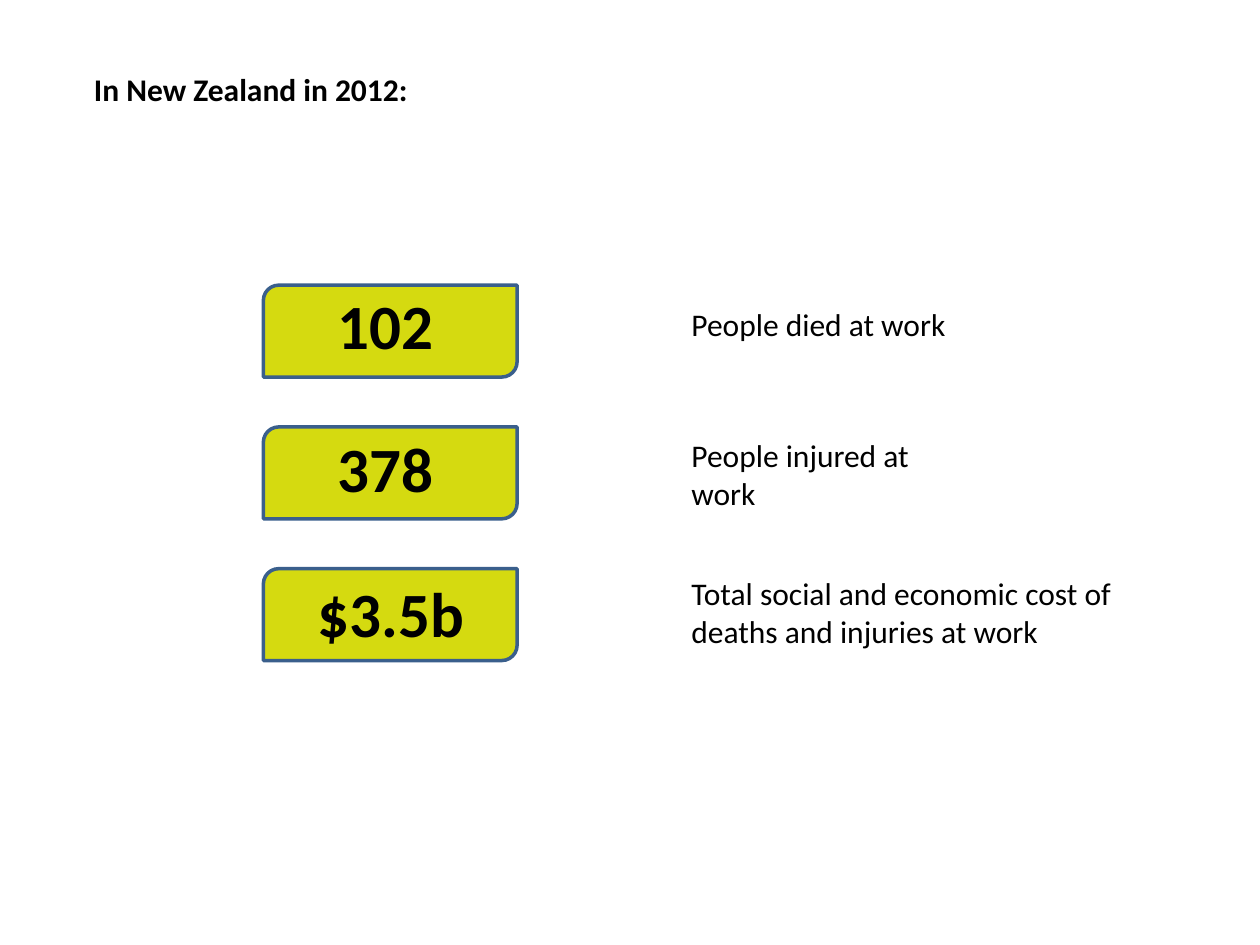
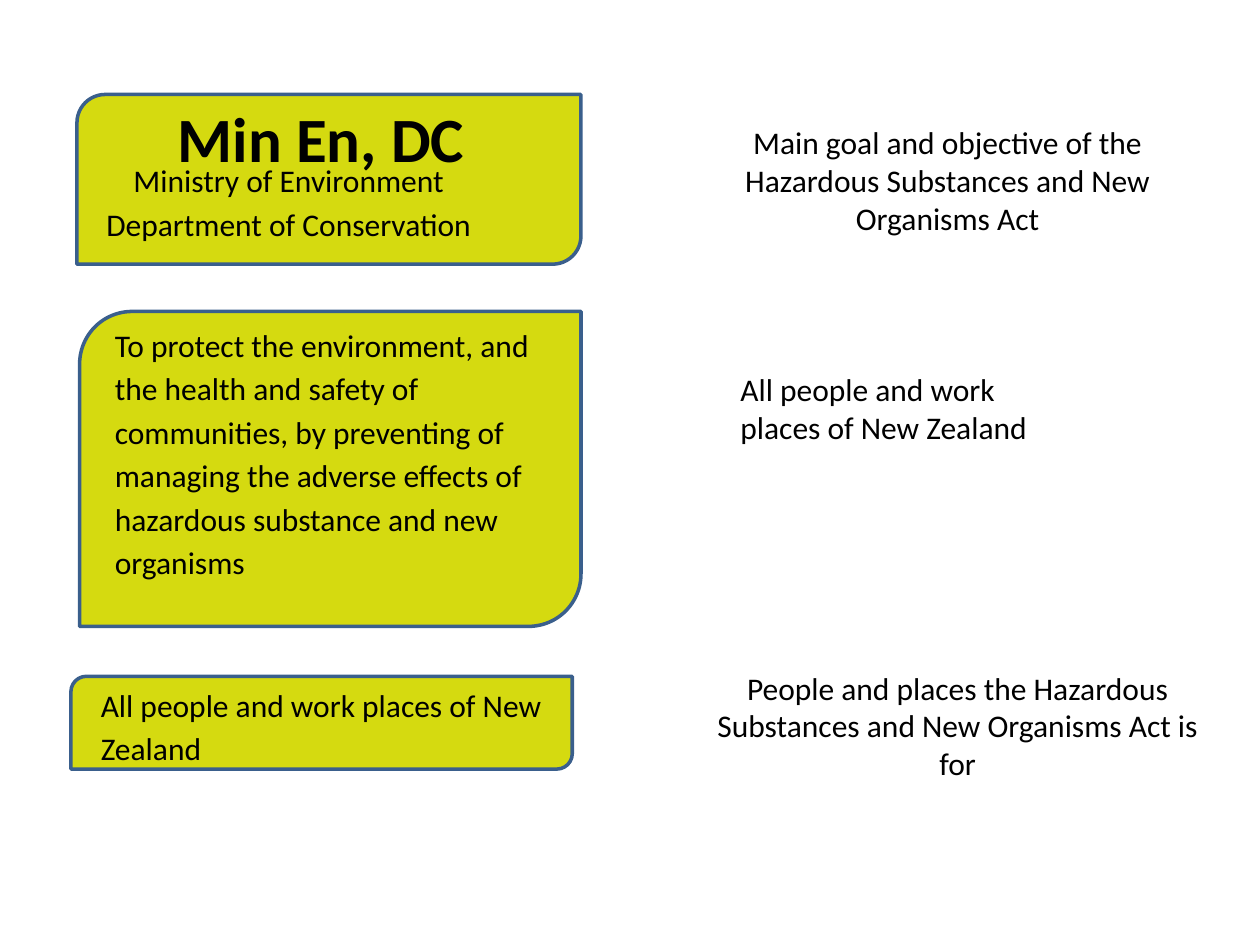
import pptx
import pptx.dml.color
import pptx.enum.shapes
import pptx.enum.text
import pptx.util

Pt = pptx.util.Pt
SHAPES = pptx.enum.shapes.MSO_SHAPE
ALIGN = pptx.enum.text.PP_ALIGN
TITLE_ONLY = 5


def color(hex_string):
    return pptx.dml.color.RGBColor.from_string(hex_string)


class Deck:
    font = "Calibri"
    ink = "000000"
    panel_fill = "D5DA10"
    panel_line = "3A5F8C"
    body_size = 18
    figure_size = 36

    def __init__(self):
        self.presentation = pptx.Presentation()
        self.presentation.slide_width = Pt(720)
        self.presentation.slide_height = Pt(540)
        self.slide = None

    def new_slide(self):
        layout = self.presentation.slide_layouts[TITLE_ONLY]
        self.slide = self.presentation.slides.add_slide(layout)

    def panel(self, left, top, width, height):
        shape = self.slide.shapes.add_shape(
            SHAPES.ROUND_2_DIAG_RECTANGLE, Pt(left), Pt(top), Pt(width), Pt(height))
        shape.shadow.inherit = False
        shape.fill.solid()
        shape.fill.fore_color.rgb = color(self.panel_fill)
        shape.line.color.rgb = color(self.panel_line)
        shape.line.width = Pt(2)

    def fill_text(self, shape, text, size, bold, align, spaced):
        frame = shape.text_frame
        frame.word_wrap = True
        frame.auto_size = pptx.enum.text.MSO_AUTO_SIZE.NONE
        frame.vertical_anchor = pptx.enum.text.MSO_ANCHOR.TOP
        paragraph = frame.paragraphs[0]
        paragraph.alignment = align
        if spaced:
            paragraph.line_spacing = 1.15
            paragraph.space_after = Pt(10)
        run = paragraph.add_run()
        run.text = text
        run.font.name = self.font
        run.font.size = Pt(size)
        run.font.bold = bold
        run.font.color.rgb = color(self.ink)

    def text(self, text, left, top, width, height, size=body_size, bold=False,
             align=ALIGN.LEFT, spaced=False):
        shape = self.slide.shapes.add_textbox(Pt(left), Pt(top), Pt(width), Pt(height))
        self.fill_text(shape, text, size, bold, align, spaced)

    def title(self, text, left, top, width, height, size=body_size, align=ALIGN.LEFT):
        title = self.slide.shapes.title
        title.left, title.top = Pt(left), Pt(top)
        title.width, title.height = Pt(width), Pt(height)
        self.fill_text(title, text, size, True, align, True)
        self.slide.shapes._spTree.append(title._element)


def build_statistics(deck):
    deck.new_slide()
    deck.title("In New Zealand in 2012:", 46.5, 33, 620, 31)
    statistics = [
        ("102", 165, 160, "People died at work", 170.5, 176.5),
        ("378", 165, 242, "People injured at work", 245.5, 176.5),
        ("$3.5b", 168, 324.5, "Total social and economic cost of deaths and injuries at work",
         324.5, 255),
    ]
    for row, (figure, left, top, caption, caption_top, caption_width) in enumerate(statistics):
        deck.panel(150.5, 163 + 81 * row, 145, 52.5)
        deck.text(figure, left, top, 111, 52, deck.figure_size, True, ALIGN.CENTER)
        deck.text(caption, 388, caption_top, caption_width, 52)


def build_act_summary(deck):
    deck.new_slide()
    deck.panel(44, 54, 288, 97)
    deck.panel(45.5, 178, 286.5, 180)
    deck.panel(40.5, 386.5, 286.5, 53)

    deck.title("Min En, DC", 85.5, 47, 196, 46, deck.figure_size, ALIGN.CENTER)
    deck.text("Ministry of Environment Department of Conservation",
              26.5, 85.5, 277, 60, align=ALIGN.CENTER, spaced=True)
    deck.text("To protect the environment, and the health and safety of communities, "
              "by preventing of managing the adverse effects of hazardous substance "
              "and new organisms", 58.5, 179.5, 259, 160, spaced=True)
    deck.text("All people and work places of New Zealand",
              50.5, 385, 273.5, 60, spaced=True)

    deck.text("Main goal and objective of the Hazardous Substances and New Organisms Act",
              417, 67, 249, 84, align=ALIGN.CENTER)
    deck.text("All people and work places of New Zealand", 416, 208, 207.5, 66)
    deck.text("People and places the Hazardous Substances and New Organisms Act is for",
              402.5, 378.5, 289.5, 72, align=ALIGN.CENTER)


def main():
    deck = Deck()
    build_statistics(deck)
    build_act_summary(deck)
    deck.presentation.save("out.pptx")


if __name__ == "__main__":
    main()
